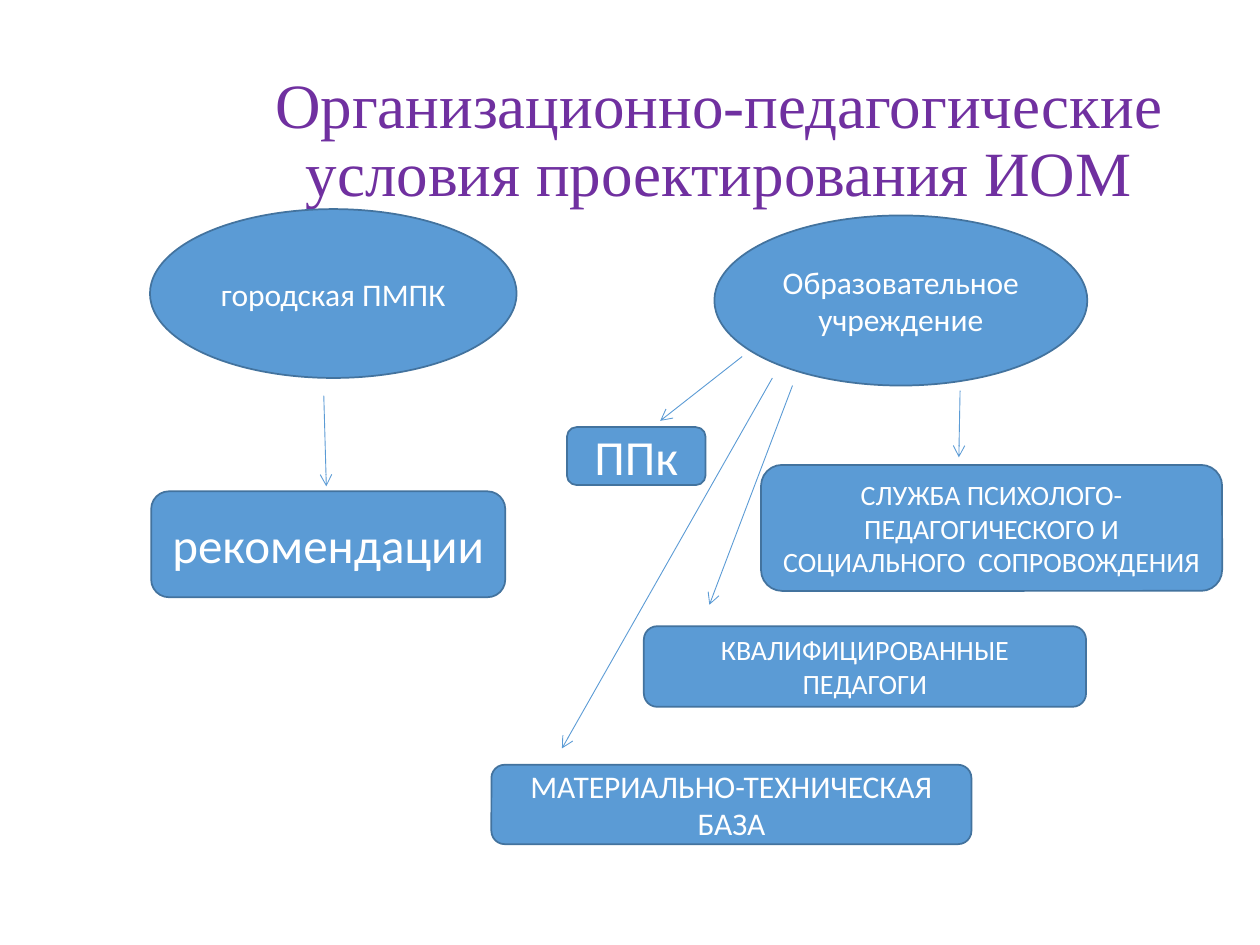
"""Build a slide on the conditions for designing an individual learning route."""
from pptx import Presentation
from pptx.dml.color import RGBColor
from pptx.enum.shapes import MSO_CONNECTOR, MSO_SHAPE
from pptx.enum.text import MSO_ANCHOR, PP_ALIGN
from pptx.oxml.ns import qn
from pptx.util import Inches, Pt
from lxml.etree import SubElement


def color(code):
    return RGBColor.from_string(code)


def write(shape, text, size, face, code):
    frame = shape.text_frame
    frame.word_wrap = True
    frame.vertical_anchor = MSO_ANCHOR.MIDDLE
    frame.text = text
    para = frame.paragraphs[0]
    para.alignment = PP_ALIGN.CENTER
    font = para.runs[0].font
    font.size = Pt(size)
    font.name = face
    font.color.rgb = color(code)
    return para


deck = Presentation()
deck.slide_width, deck.slide_height = Inches(10), Inches(7.5)
slide = deck.slides.add_slide(deck.slide_layouts[6])
shapes = slide.shapes

title = shapes.add_textbox(Inches(1.77), Inches(0.4), Inches(7.87), Inches(1.45))
head = write(title, "Организационно-педагогические условия проектирования ИОМ",
             36, "Times New Roman", "7030A0")
head.line_spacing = 0.9

oval, box = MSO_SHAPE.OVAL, MSO_SHAPE.ROUNDED_RECTANGLE
nodes = [
    (oval, 1.19, 1.66, 2.91, 1.34, 18, "городская ПМПК"),
    (oval, 5.67, 1.71, 2.96, 1.35, 18, "Образовательное учреждение"),
    (box, 1.2, 3.9, 2.81, 0.84, 28, "рекомендации"),
    (box, 4.5, 3.39, 1.1, 0.46, 28, "ППк"),
    (box, 6.04, 3.69, 3.66, 1, 16,
     "СЛУЖБА ПСИХОЛОГО-ПЕДАГОГИЧЕСКОГО И СОЦИАЛЬНОГО  СОПРОВОЖДЕНИЯ"),
    (box, 5.11, 4.97, 3.51, 0.64, 16, "КВАЛИФИЦИРОВАННЫЕ ПЕДАГОГИ"),
    (box, 3.9, 6.07, 3.81, 0.63, 18, "МАТЕРИАЛЬНО-ТЕХНИЧЕСКАЯ БАЗА"),
]
for kind, left, top, width, height, size, text in nodes:
    node = shapes.add_shape(kind, Inches(left), Inches(top), Inches(width), Inches(height))
    node.shadow.inherit = False
    node.fill.solid()
    node.fill.fore_color.rgb = color("5B9BD5")
    node.line.color.rgb = color("43739E")
    node.line.width = Pt(1)
    write(node, text, size, "Calibri", "FFFFFF")

arrows = [
    (2.57, 3.14, 2.59, 3.86),
    (5.89, 2.83, 5.24, 3.34),
    (7.62, 3.1, 7.61, 3.63),
    (6.29, 3.06, 5.63, 4.8),
    (6.13, 3, 4.46, 5.94),
]
for ends in arrows:
    arrow = shapes.add_connector(MSO_CONNECTOR.STRAIGHT, *map(Inches, ends))
    arrow.line.color.rgb = color("5B9BD5")
    arrow.line.width = Pt(0.5)
    props = arrow.element.spPr
    SubElement(props.find(qn("a:ln")), qn("a:tailEnd"), type="arrow")
    SubElement(props, qn("a:effectLst"))

deck.save("out.pptx")
